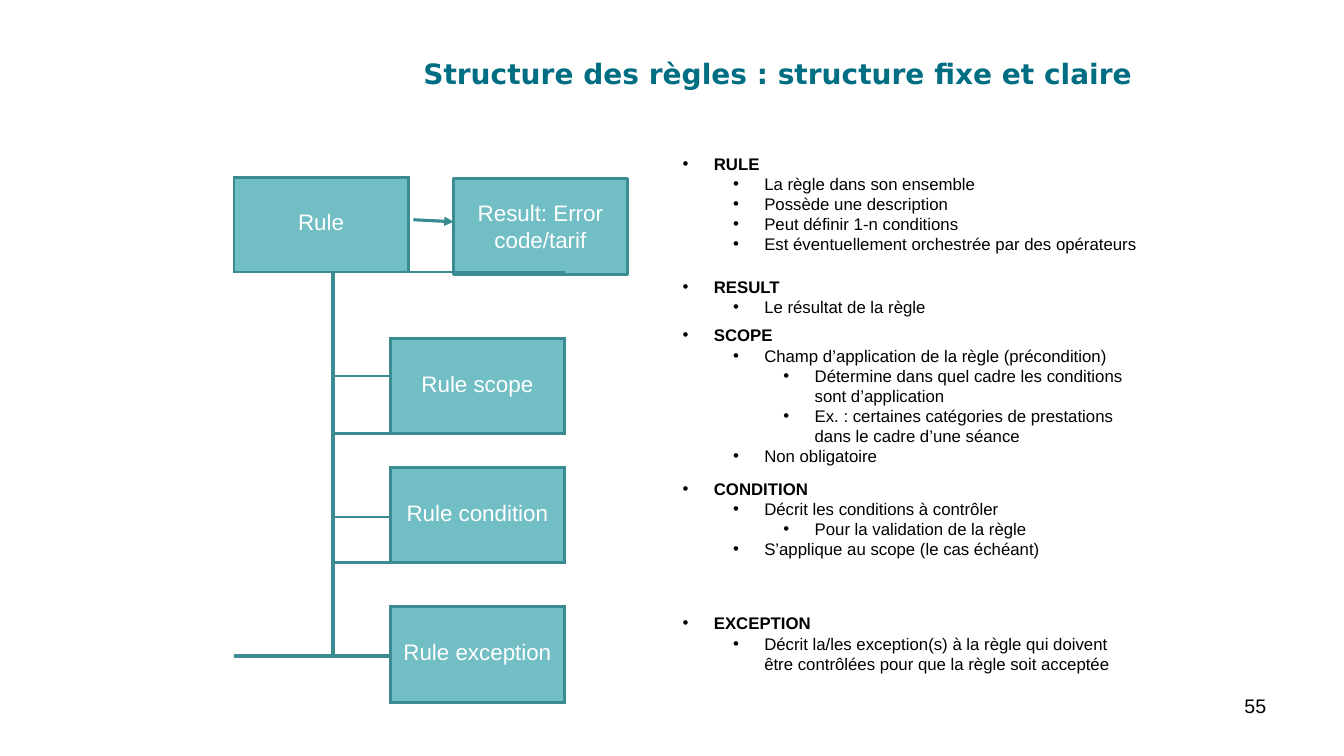
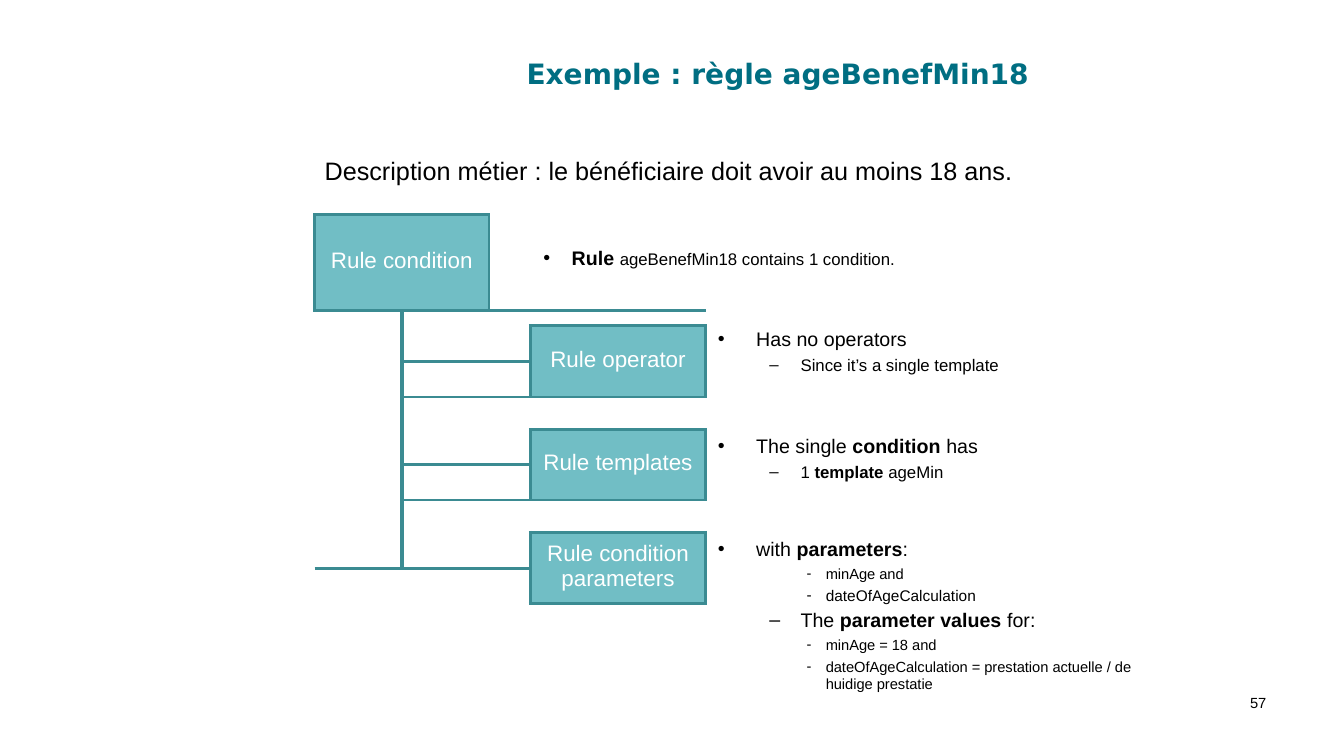
from dataclasses import dataclass

from lxml.etree import SubElement
from pptx import Presentation
from pptx.dml.color import RGBColor
from pptx.enum.shapes import MSO_CONNECTOR, MSO_SHAPE
from pptx.enum.text import MSO_ANCHOR, MSO_AUTO_SIZE, PP_ALIGN
from pptx.oxml.ns import qn
from pptx.shapes.autoshape import Shape
from pptx.slide import Slide
from pptx.table import Table, _Cell
from pptx.text.text import TextFrame, _Paragraph
from pptx.util import Emu, Inches, Pt


@dataclass(frozen=True)
class Theme:
    title_color: RGBColor = RGBColor(0x00, 0x6E, 0x82)
    box_fill: RGBColor = RGBColor(0x71, 0xBE, 0xC5)
    line: RGBColor = RGBColor(0x3B, 0x8B, 0x92)
    text: RGBColor = RGBColor(0, 0, 0)
    box_text: RGBColor = RGBColor(0xFF, 0xFF, 0xFF)
    title_font: str = "DejaVu Sans"
    body_font: str = "Arial"
    title_size: float = 20
    subtitle_size: float = 18
    box_size: float = 16
    large_size: float = 14
    text_size: float = 12
    value_size: float = 11
    small_size: float = 10.5
    line_height: float = 1.19
    box_line: float = 2.25
    tree_line: float = 3


THEME = Theme()


@dataclass(frozen=True)
class ListLevel:
    depth: int
    left: float
    hanging: float
    bullet: str
    size: float


HEADING = ListLevel(0, 0.33, 0.31, "•", THEME.text_size)
ITEM = ListLevel(1, 0.83, 0.31, "•", THEME.text_size)
DETAIL = ListLevel(2, 1.33, 0.31, "•", THEME.text_size)
LEAD = ListLevel(0, 0.3, 0.28, "•", THEME.large_size)
POINT = ListLevel(1, 2.13, 0.38, "•", THEME.large_size)
NOTE = ListLevel(2, 2.57, 0.31, "–", THEME.text_size)
VALUE = ListLevel(3, 2.82, 0.19, "-", THEME.small_size)


@dataclass(frozen=True)
class TextRun:
    text: str
    bold: bool = False
    size: float | None = None


@dataclass(frozen=True)
class ListLine:
    level: ListLevel
    runs: tuple[TextRun, ...]
    before: float = 0
    size: float | None = None


@dataclass(frozen=True)
class Area:
    left: float
    top: float
    width: float
    height: float

    def lengths(self) -> tuple[Emu, ...]:
        return tuple(Inches(value) for value in (self.left, self.top, self.width, self.height))


@dataclass(frozen=True)
class RuleTree:
    """A header box and three child boxes joined by a spine, on a ten-row grid."""
    area: Area
    columns: tuple[float, ...]
    rows: tuple[float, ...]
    header: str
    header_span: int
    children: tuple[str, str, str]
    child_column: int


@dataclass(frozen=True)
class RuleSlide:
    title: str
    number: str
    number_size: float
    list_area: Area
    lines: tuple[ListLine, ...]
    tree: RuleTree
    result: str = ""
    description: str = ""


def line(level: ListLevel, text: str, before: float = 0, size: float | None = None) -> ListLine:
    return ListLine(level, (TextRun(text),), before, size)


def heading(text: str, before: float = 0) -> ListLine:
    return ListLine(HEADING, (TextRun(text, True),), before)


def set_font(paragraph: _Paragraph, size: float, color: RGBColor = THEME.text,
             name: str = THEME.body_font, bold: bool = False) -> None:
    font = paragraph.font
    font.size, font.name, font.bold = Pt(size), name, bold
    font.color.rgb = color


def prepare_frame(frame: TextFrame) -> None:
    """Remove the margins and let the text wrap from the top."""
    frame.margin_left = frame.margin_right = frame.margin_top = frame.margin_bottom = 0
    frame.word_wrap = True
    frame.auto_size = MSO_AUTO_SIZE.NONE
    frame.vertical_anchor = MSO_ANCHOR.TOP


def place(shape: Shape, area: Area) -> None:
    shape.left, shape.top, shape.width, shape.height = area.lengths()


def add_title(slide: Slide, text: str) -> None:
    title = slide.shapes.title
    place(title, Area(1.05, 0.31, 11.26, 0.76))
    frame = title.text_frame
    prepare_frame(frame)
    frame.margin_left, frame.margin_top = Inches(2.07), Inches(0.25)
    paragraph = frame.paragraphs[0]
    paragraph.text = text
    paragraph.alignment = PP_ALIGN.CENTER
    set_font(paragraph, THEME.title_size, THEME.title_color, THEME.title_font, True)


def add_text(slide: Slide, area: Area, text: str, size: float,
             alignment: PP_ALIGN = PP_ALIGN.LEFT) -> None:
    frame = slide.shapes.add_textbox(*area.lengths()).text_frame
    prepare_frame(frame)
    paragraph = frame.paragraphs[0]
    paragraph.text = text
    paragraph.alignment = alignment
    set_font(paragraph, size)


def set_bullet(paragraph: _Paragraph, level: ListLevel) -> None:
    properties = paragraph._p.get_or_add_pPr()
    properties.set("marL", str(Inches(level.left)))
    properties.set("indent", str(-Inches(level.hanging)))
    SubElement(properties, qn("a:buChar")).set("char", level.bullet)


def fill_list(slide: Slide, area: Area, lines: tuple[ListLine, ...]) -> None:
    body = slide.placeholders[1]
    place(body, area)
    frame = body.text_frame
    prepare_frame(frame)
    for index, entry in enumerate(lines):
        paragraph = frame.add_paragraph() if index else frame.paragraphs[0]
        size = entry.size or entry.level.size
        paragraph.level = entry.level.depth
        paragraph.alignment = PP_ALIGN.LEFT
        paragraph.line_spacing = Pt(size * THEME.line_height)
        paragraph.space_before, paragraph.space_after = Pt(entry.before), Pt(0)
        set_bullet(paragraph, entry.level)
        set_font(paragraph, size)
        for part in entry.runs:
            run = paragraph.add_run()
            run.text = part.text
            run.font.bold = part.bold
            if part.size:
                run.font.size = Pt(part.size)


def set_borders(cell: _Cell, sides: str, width: float) -> None:
    """Draw the given sides, named by letters in the order L, R, T, B."""
    properties = cell._tc.get_or_add_tcPr()
    for index, side in enumerate(sides):
        border = properties.makeelement(qn(f"a:ln{side}"), {"w": str(Pt(width))})
        color = SubElement(SubElement(border, qn("a:solidFill")), qn("a:srgbClr"))
        color.set("val", str(THEME.line))
        properties.insert(index, border)


def join_cells(table: Table, first: tuple[int, int], last: tuple[int, int]) -> _Cell:
    cell = table.cell(*first)
    if first != last:
        cell.merge(table.cell(*last))
    return cell


def add_tree_box(table: Table, first: tuple[int, int], last: tuple[int, int], text: str) -> None:
    cell = join_cells(table, first, last)
    cell.fill.solid()
    cell.fill.fore_color.rgb = THEME.box_fill
    set_borders(cell, "LRTB", THEME.box_line)
    cell.vertical_anchor = MSO_ANCHOR.MIDDLE
    cell.margin_bottom = Inches(0.03)
    paragraph = cell.text_frame.paragraphs[0]
    paragraph.text = text
    paragraph.alignment = PP_ALIGN.CENTER
    set_font(paragraph, THEME.box_size, THEME.box_text)


def add_tree(slide: Slide, tree: RuleTree) -> None:
    last_row, last_column = len(tree.rows) - 1, len(tree.columns) - 1
    table = slide.shapes.add_table(last_row + 1, last_column + 1, *tree.area.lengths()).table
    table.first_row = table.horz_banding = False
    style = table._tbl.tblPr.find(qn("a:tableStyleId"))
    style.text = "{2D5ABB26-0587-4C30-8999-92F81FD0307C}"
    for column, width in zip(table.columns, tree.columns):
        column.width = Inches(width)
    for row, height in zip(table.rows, tree.rows):
        row.height = Inches(height)
    for cell in table.iter_cells():
        cell.margin_left = cell.margin_right = cell.margin_top = cell.margin_bottom = 0
        cell.fill.background()
        cell.text_frame.paragraphs[0]._p.get_or_add_endParaRPr().set("sz", "100")

    branch_end = tree.child_column - 1
    add_tree_box(table, (0, 0), (0, tree.header_span - 1), tree.header)
    header_rest = join_cells(table, (0, tree.header_span), (0, last_column))
    set_borders(header_rest, "B", THEME.box_line)
    set_borders(join_cells(table, (1, 0), (last_row - 1, 0)), "RB", THEME.tree_line)
    join_cells(table, (last_row, 0), (last_row, branch_end))
    for index, text in enumerate(tree.children):
        gap = 1 + 3 * index
        join_cells(table, (gap, 1), (gap, last_column))
        add_tree_box(table, (gap + 1, tree.child_column), (gap + 2, last_column), text)
        for row in range(gap + 1, min(gap + 3, last_row)):
            branch = join_cells(table, (row, 1), (row, branch_end))
            set_borders(branch, "B", THEME.box_line)


def add_result(slide: Slide, text: str) -> None:
    """Add the result box and the arrow that leads to it from the rule."""
    area = Area(4.5, 1.77, 1.72, 0.95)
    box = slide.shapes.add_shape(MSO_SHAPE.RECTANGLE, *area.lengths())
    box.shadow.inherit = False
    box.fill.solid()
    box.fill.fore_color.rgb = THEME.box_fill
    box.line.color.rgb, box.line.width = THEME.line, Pt(2)
    frame = box.text_frame
    frame.word_wrap = True
    frame.vertical_anchor = MSO_ANCHOR.MIDDLE
    paragraph = frame.paragraphs[0]
    paragraph.text = text
    paragraph.alignment = PP_ALIGN.CENTER
    set_font(paragraph, THEME.box_size, THEME.box_text)

    arrow = slide.shapes.add_connector(MSO_CONNECTOR.STRAIGHT, Inches(4.1), Inches(2.18),
                                       Inches(4.5), Inches(2.2))
    arrow.line.color.rgb, arrow.line.width = THEME.line, Pt(2.25)
    SubElement(arrow.line._get_or_add_ln(), qn("a:tailEnd")).set("type", "triangle")
    SubElement(arrow._element.spPr, qn("a:effectLst"))


def add_rule_slide(presentation: Presentation, content: RuleSlide) -> None:
    slide = presentation.slides.add_slide(presentation.slide_layouts[1])
    add_title(slide, content.title)
    fill_list(slide, content.list_area, content.lines)
    if content.result:
        add_result(slide, content.result)
    add_tree(slide, content.tree)
    if content.description:
        add_text(slide, Area(3.22, 1.54, 7, 0.33), content.description, THEME.subtitle_size)
    add_text(slide, Area(12.26, 6.88, 0.3, 0.25), content.number, content.number_size,
             PP_ALIGN.RIGHT)


STRUCTURE = RuleSlide(
    "Structure des règles : structure fixe et claire", "55", THEME.large_size,
    Area(6.75, 1.53, 4.53, 5.2),
    (heading("RULE"),
     line(ITEM, "La règle dans son ensemble"),
     line(ITEM, "Possède une description"),
     line(ITEM, "Peut définir 1-n conditions"),
     line(ITEM, "Est éventuellement orchestrée par des opérateurs"),
     heading("RESULT", 16.4),
     line(ITEM, "Le résultat de la règle"),
     heading("SCOPE", 5.7),
     line(ITEM, "Champ d’application de la règle (précondition)", 0.5),
     line(DETAIL, "Détermine dans quel cadre les conditions sont d’application"),
     line(DETAIL, "Ex. : certaines catégories de prestations dans le cadre d’une séance"),
     line(ITEM, "Non obligatoire"),
     heading("CONDITION", 9.2),
     line(ITEM, "Décrit les conditions à contrôler"),
     line(DETAIL, "Pour la validation de la règle"),
     line(ITEM, "S’applique au scope (le cas échéant)"),
     heading("EXCEPTION", 38.6),
     line(ITEM, "Décrit la/les exception(s) à la règle qui doivent être contrôlées "
                "pour que la règle soit acceptée", 0.5)),
    RuleTree(Area(2.32, 1.76, 3.28, 5.21), (0.98, 0.57, 0.18, 1.55),
             (0.94, 0.66, 0.37, 0.57, 0.34, 0.49, 0.45, 0.44, 0.49, 0.46),
             "Rule", 3, ("Rule scope", "Rule condition", "Rule exception"), 2),
    result="Result: Error code/tarif")

EXAMPLE = RuleSlide(
    "Exemple : règle ageBenefMin18", "57", THEME.small_size,
    Area(5.37, 2.44, 5.89, 4.41),
    (ListLine(LEAD, (TextRun("Rule ", True),
                     TextRun("ageBenefMin18 contains 1 condition.", size=THEME.text_size))),
     line(POINT, "Has no operators", 41.2),
     line(NOTE, "Since it’s a single template", 3),
     ListLine(POINT, (TextRun("The single "), TextRun("condition ", True), TextRun("has")), 42.4),
     ListLine(NOTE, (TextRun("1 "), TextRun("template ", True), TextRun("ageMin")), 3),
     ListLine(POINT, (TextRun("with "), TextRun("parameters", True), TextRun(":")), 39.5),
     line(VALUE, "minAge and", 3.4),
     line(VALUE, "dateOfAgeCalculation", 2.6, THEME.value_size),
     ListLine(NOTE, (TextRun("The "), TextRun("parameter values ", True), TextRun("for:")),
              3, THEME.large_size),
     line(VALUE, "minAge = 18 and", 2.8),
     line(VALUE, "dateOfAgeCalculation = prestation actuelle / de huidige prestatie", 3.2)),
    RuleTree(Area(3.12, 2.13, 3.88, 3.86), (0.87, 0.86, 0.41, 1.74),
             (0.95, 0.15, 0.36, 0.35, 0.32, 0.35, 0.35, 0.32, 0.36, 0.35),
             "Rule condition", 2,
             ("Rule operator", "Rule templates", "Rule condition parameters"), 3),
    description="Description métier : le bénéficiaire doit avoir au moins 18 ans.")


def main() -> None:
    presentation = Presentation()
    presentation.slide_width, presentation.slide_height = Inches(13.33), Inches(7.5)
    for content in (STRUCTURE, EXAMPLE):
        add_rule_slide(presentation, content)
    presentation.save("out.pptx")


if __name__ == "__main__":
    main()
